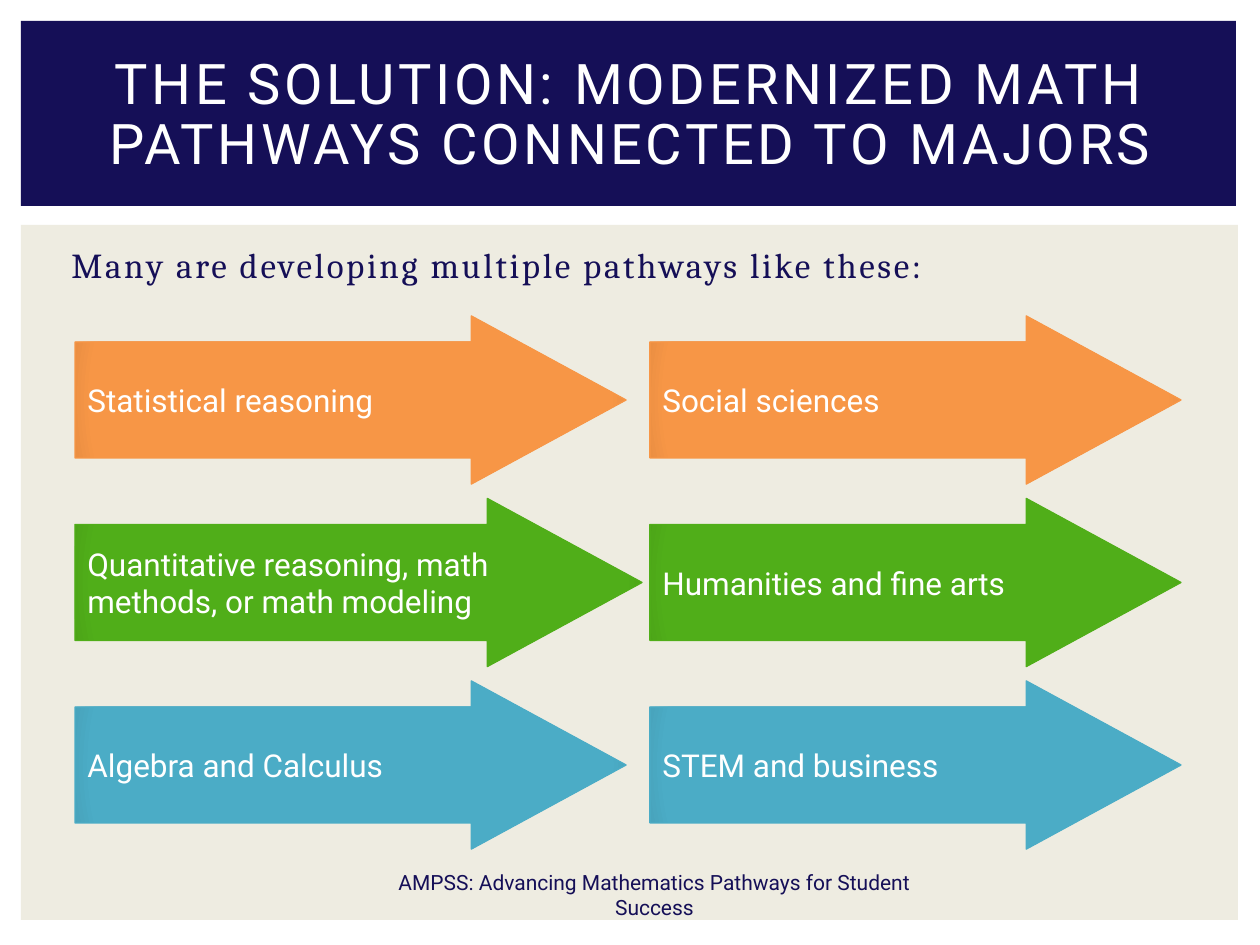
import pptx
import pptx.util
import pptx.dml.color
import pptx.enum.shapes
import pptx.enum.text
import pptx.oxml
import pptx.oxml.ns

PX = 914400 / 126
NAVY = "150F57"
WHITE = "FFFFFF"
ANCHOR = pptx.enum.text.MSO_ANCHOR
ALIGN = pptx.enum.text.PP_ALIGN
SHAPE = pptx.enum.shapes.MSO_SHAPE


def add_box(page, at, preset=None, color=None):
    """Add a text box, or a filled preset shape, at (left, top, width, height) in px."""
    place = [round(value * PX) for value in at]
    if preset is None:
        return page.shapes.add_textbox(*place)
    box = page.shapes.add_shape(preset, *place)
    box.shadow.inherit = False
    box.fill.solid()
    box.fill.fore_color.rgb = pptx.dml.color.RGBColor.from_string(color)
    box.line.fill.background()
    return box


def write(box, text, size, color, font="Roboto", align=ALIGN.LEFT,
          anchor=ANCHOR.MIDDLE, spacing=0, line=1.0, before=0):
    frame = box.text_frame
    frame.word_wrap = True
    frame.vertical_anchor = anchor
    para = frame.paragraphs[0]
    para.alignment = align
    para.line_spacing = line
    para.space_before = pptx.util.Pt(before)
    span = para.add_run()
    span.text = text
    span.font.name = font
    span.font.size = pptx.util.Pt(size)
    span.font.color.rgb = pptx.dml.color.RGBColor.from_string(color)
    if spacing:
        span.font._element.set("spc", str(round(spacing * 100)))


deck = pptx.Presentation()
deck.slide_width = round(1260 * PX)
deck.slide_height = round(945 * PX)
page = deck.slides.add_slide(deck.slide_layouts[6])

add_box(page, (21, 225, 1217, 695), SHAPE.RECTANGLE, "EEECE1")
add_box(page, (21, 21, 1215, 185), SHAPE.RECTANGLE, NAVY)

intro = add_box(page, (59, 237, 1152, 60))
write(intro, "Many are developing multiple pathways like these:", 20, NAVY,
      font="Cambria", anchor=ANCHOR.TOP, spacing=1.5, before=4)

footer = add_box(page, (345, 876, 619, 38))
write(footer, "AMPSS: Advancing Mathematics Pathways for Student Success", 12, NAVY,
      align=ALIGN.CENTER)

title = add_box(page, (53, 44, 1155, 145))
write(title, "THE SOLUTION: MODERNIZED MATH PATHWAYS CONNECTED TO MAJORS", 32, WHITE,
      align=ALIGN.CENTER, spacing=2, line=0.9)

# Pathway, width of its arrow, majors it serves, fill and darker tail colour
pathways = [
    ("Statistical reasoning", 551, "Social sciences", "F79646", "E68C41"),
    ("Quantitative reasoning, math methods, or math modeling", 567,
     "Humanities and fine arts", "50AE19", "4BA217"),
    ("Algebra and Calculus", 551, "STEM and business", "4BACC6", "46A0B8"),
]
for row, (pathway, width, majors, color, tail) in enumerate(pathways):
    top = 316 + row * 182.5
    for text, left, length in ((pathway, 75, width), (majors, 650, 531)):
        arrow = add_box(page, (left, top, length, 168), SHAPE.RIGHT_ARROW, color)
        arrow.adjustments[0] = 0.69
        arrow.adjustments[1] = 0.92
        arrow.line.color.rgb = pptx.dml.color.RGBColor.from_string(color)
        arrow.line.width = pptx.util.Pt(0.79)
        stops = "".join(
            f'<a:gs pos="{percent * 1000}"><a:srgbClr val="{shade}"/></a:gs>'
            for percent, shade in ((0, color), (90, color), (100, tail)))
        gradient = pptx.oxml.parse_xml(
            f'<a:gradFill {pptx.oxml.ns.nsdecls("a")} rotWithShape="1">'
            f'<a:gsLst>{stops}</a:gsLst><a:path path="circle">'
            '<a:fillToRect l="100000" t="100000" r="100000" b="100000"/>'
            '</a:path></a:gradFill>')
        properties = arrow._element.spPr
        properties.replace(properties.find(pptx.oxml.ns.qn("a:solidFill")), gradient)
        write(arrow, text, 18, WHITE)

deck.save("out.pptx")
